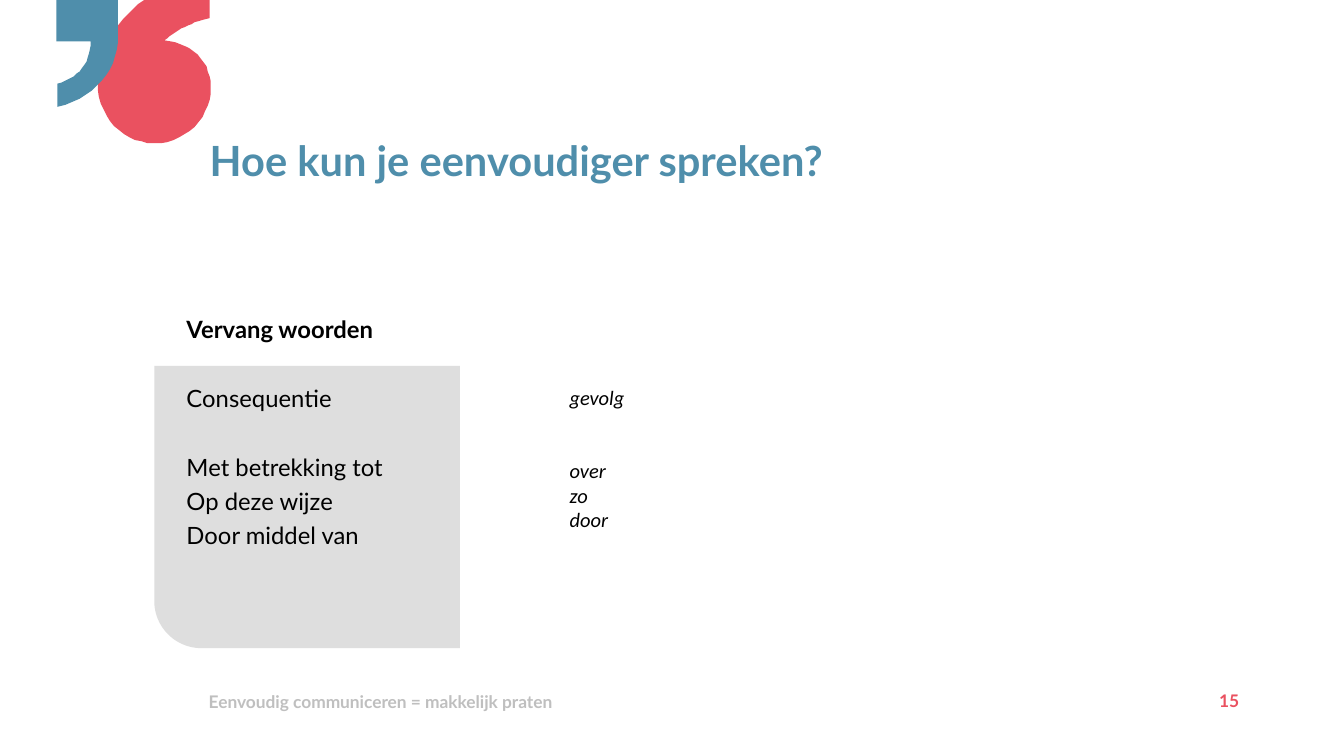
"""Build the slide on replacing difficult words with simpler ones."""
import pptx
import pptx.dml.color
import pptx.enum.shapes
import pptx.enum.text
import pptx.util
from lxml import etree
from pptx.oxml.ns import qn

PX = 9144
BLUE = pptx.dml.color.RGBColor(0x4F, 0x8E, 0xAB)
RED = pptx.dml.color.RGBColor(0xEA, 0x51, 0x60)
PANEL_GREY = pptx.dml.color.RGBColor(0xD9, 0xD9, 0xD9)
FOOTER_GREY = pptx.dml.color.RGBColor(0xBF, 0xBF, 0xBF)
BLACK = pptx.dml.color.RGBColor(0, 0, 0)
LEFT = pptx.enum.text.PP_ALIGN.LEFT
RIGHT = pptx.enum.text.PP_ALIGN.RIGHT
CURVE_STEPS = 14


def curve(*controls):
    """Return points along a cubic Bezier curve, without its start."""
    points = []
    for step in range(1, CURVE_STEPS + 1):
        t = step / CURVE_STEPS
        weights = ((1 - t) ** 3, 3 * t * (1 - t) ** 2, 3 * t * t * (1 - t), t ** 3)
        points.append(tuple(sum(weight * control[axis] for weight, control in zip(weights, controls))
                            for axis in (0, 1)))
    return points


def add_text(slide, box, lines, font_name, size, color, bold=False, italic=False,
             align=LEFT, line_spacing=None, insets=(0, 1, 0, 0)):
    """Add a text box; each line is a pair of text and space before in points."""
    shape = slide.shapes.add_textbox(*(value * PX for value in box))
    frame = shape.text_frame
    frame.word_wrap = True
    frame.margin_left, frame.margin_top, frame.margin_right, frame.margin_bottom = (
        inset * PX for inset in insets)
    frame.text = "\n".join(text for text, gap in lines)
    for paragraph, (text, gap) in zip(frame.paragraphs, lines):
        paragraph.alignment = align
        if line_spacing:
            paragraph.line_spacing = line_spacing
        if gap:
            paragraph.space_before = pptx.util.Pt(gap)
        for run in paragraph.runs:
            run.font.name = font_name
            run.font.size = pptx.util.Pt(size)
            run.font.bold = bold
            run.font.italic = italic
            run.font.color.rgb = color
    return shape


presentation = pptx.Presentation()
presentation.slide_width = 1333 * PX
presentation.slide_height = 750 * PX
slide = presentation.slides.add_slide(presentation.slide_layouts[6])

add_text(slide, (208, 138, 661, 46), [("Hoe kun je eenvoudiger spreken?", 0)],
         "Lato", 29.7, BLUE, bold=True, line_spacing=0.9)
add_text(slide, (207, 685, 485, 22), [("Eenvoudig communiceren = makkelijk praten", 0)],
         "Lato", 12.4, FOOTER_GREY, bold=True)

opening_quote = [
    (208, 0), (143, 0),
    *curve((143, 0), (116, 19), (97, 48), (97, 82)),
    *curve((97, 82), (97, 116), (122, 142), (153, 142)),
    *curve((153, 142), (185, 142), (209, 117), (209, 86)),
    *curve((209, 86), (209, 61), (190, 42), (163, 40)),
    *curve((163, 40), (175, 30), (190, 22), (208, 18)),
]
closing_quote = [
    (117, 0), (56, 0), (56, 41), (90, 41),
    *curve((90, 41), (90, 62), (78, 77), (57, 83)),
    (57, 106),
    *curve((57, 106), (94, 97), (117, 70), (117, 35)),
]
quotes = slide.shapes.add_group_shape()
for outline, color in ((opening_quote, RED), (closing_quote, BLUE)):
    builder = quotes.shapes.build_freeform(*outline[0], scale=PX)
    builder.add_line_segments(outline[1:], close=True)
    quote = builder.convert_to_shape()
    quote.shadow.inherit = False
    quote.fill.solid()
    quote.fill.fore_color.rgb = color
    quote.line.fill.background()

panel = slide.shapes.add_shape(pptx.enum.shapes.MSO_SHAPE.ROUND_1_RECTANGLE,
                               153 * PX, 363 * PX, 303 * PX, 280 * PX)
panel.rotation = 180
panel.adjustments[0] = 0.167
panel.shadow.inherit = False
panel.fill.solid()
panel.fill.fore_color.rgb = PANEL_GREY
panel.line.fill.background()
panel_color = panel.element.spPr.find(qn("a:solidFill")).find(qn("a:srgbClr"))
etree.SubElement(panel_color, qn("a:alpha")).set("val", "85000")

difficult_words = add_text(
    slide, (185, 300, 300, 418),
    [("Vervang woorden", 0), ("Consequentie", 24.5), ("Met betrekking tot", 24.5),
     ("Op deze wijze", 0), ("Door middel van", 0)],
    "Lato", 17, BLACK, line_spacing=1.2, insets=(0, 7, 0, 0))
difficult_words.text_frame.paragraphs[0].runs[0].font.bold = True

add_text(slide, (921, 684, 308, 22), [("15", 0)], "Lato", 12.4, RED, bold=True, align=RIGHT)
add_text(slide, (555, 377, 721, 186), [("gevolg", 0), ("over", 35), ("zo", 0), ("door", 0)],
         "Calibri", 14.6, BLACK, italic=True, insets=(10, 5, 10, 5))

presentation.save("out.pptx")
